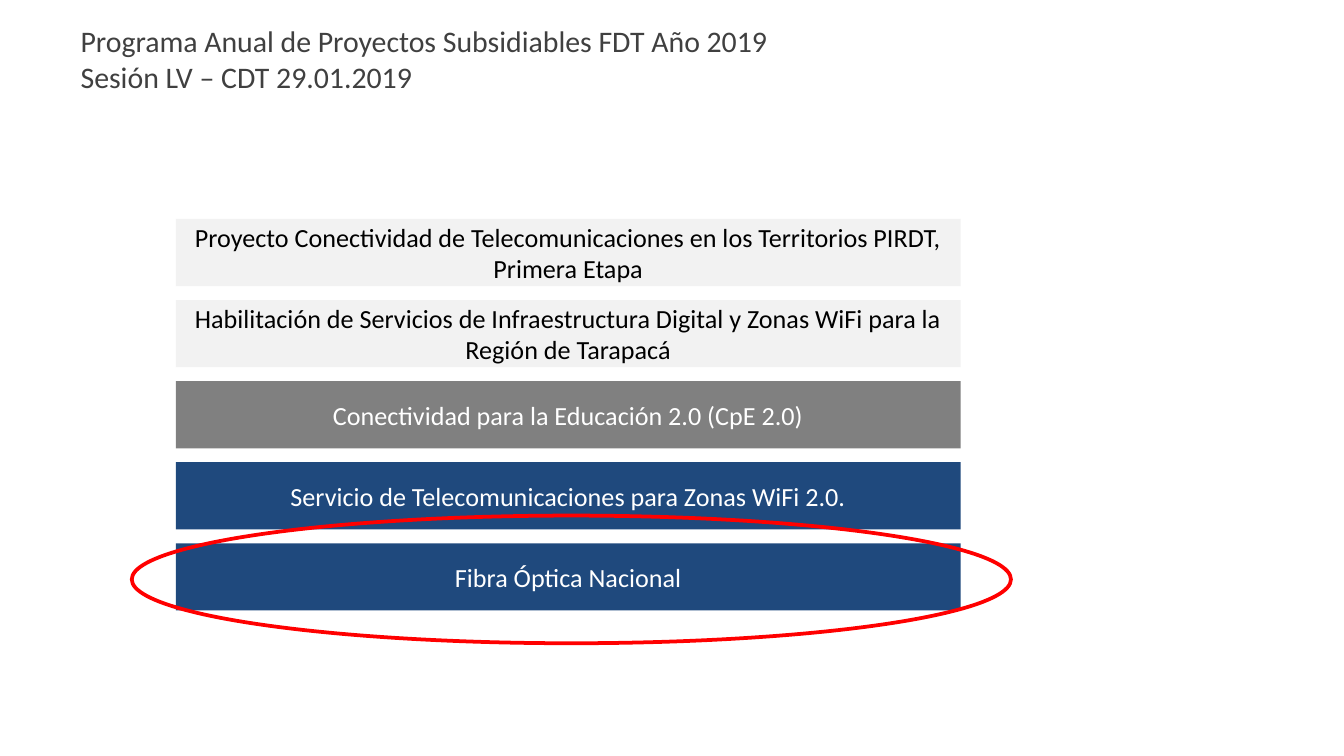
from pptx import Presentation
from pptx.dml.color import RGBColor
from pptx.enum import shapes, text
from pptx.util import Pt

COLOURS = {
    "title": "404040", "black": "000000", "white": "FFFFFF",
    "light": "F2F2F2", "grey": "808080", "blue": "1F497D", "red": "FF0000",
}
TITLE = ["Programa Anual de Proyectos Subsidiables FDT Año 2019",
         "Sesión LV – CDT 29.01.2019"]
# Each project: name, bar colour, text colour
PROJECTS = [
    ("Proyecto Conectividad de Telecomunicaciones en los Territorios PIRDT, "
     "Primera Etapa", "light", "black"),
    ("Habilitación de Servicios de Infraestructura Digital y Zonas WiFi para la "
     "Región de Tarapacá", "light", "black"),
    ("Conectividad para la Educación 2.0 (CpE 2.0)", "grey", "white"),
    ("Servicio de Telecomunicaciones para Zonas WiFi 2.0.", "blue", "white"),
    ("Fibra Óptica Nacional", "blue", "white"),
]


def colour(name):
    return RGBColor.from_string(COLOURS[name])


def apply_format(target, values):
    for name, value in values.items():
        setattr(target, name, value)


def place(shape, box):
    names = ("left", "top", "width", "height")
    apply_format(shape, dict(zip(names, map(Pt, box))))


def write(shape, lines, size, ink, align, frame_format):
    frame = shape.text_frame
    frame.text = "\n".join(lines)
    apply_format(frame, {"word_wrap": True,
                         "auto_size": text.MSO_AUTO_SIZE.NONE, **frame_format})
    for para in frame.paragraphs:
        para.alignment = align
        apply_format(para.font, {"name": "Calibri", "size": Pt(size), "bold": False})
        para.font.color.rgb = colour(ink)


def add_title(page, box):
    title = page.shapes.title
    place(title, box)
    write(title, TITLE, 16, "title", text.PP_ALIGN.JUSTIFY, {
        "vertical_anchor": text.MSO_ANCHOR.TOP,
        "margin_left": Pt(7.2), "margin_right": Pt(7.2),
        "margin_top": Pt(3.6), "margin_bottom": Pt(3.6)})


def add_projects(page, box, gap=7.45):
    left, top, width, height = box
    count = len(PROJECTS)
    bar_height = (height - gap * (count - 1)) / count
    for index, (name, fill, ink) in enumerate(PROJECTS):
        bar = page.shapes.add_shape(shapes.MSO_SHAPE.RECTANGLE, 0, 0, 0, 0)
        place(bar, (left, top + index * (bar_height + gap), width, bar_height))
        bar.shadow.inherit = False
        bar.fill.solid()
        bar.fill.fore_color.rgb = colour(fill)
        bar.line.fill.background()
        write(bar, [name], 14, ink, text.PP_ALIGN.CENTER, {
            "vertical_anchor": text.MSO_ANCHOR.MIDDLE,
            "margin_top": 0, "margin_bottom": 0})


def add_highlight(page, box):
    ring = page.shapes.add_shape(shapes.MSO_SHAPE.OVAL, 0, 0, 0, 0)
    place(ring, box)
    ring.shadow.inherit = False
    ring.fill.background()
    ring.line.color.rgb = colour("red")
    ring.line.width = Pt(2)


def main():
    deck = Presentation()
    deck.slide_width, deck.slide_height = Pt(720), Pt(405)
    page = deck.slides.add_slide(deck.slide_layouts.get_by_name("Title Only"))
    add_title(page, (36, 8.6, 650, 29.5))
    # Stack of projects, the last one ringed
    add_projects(page, (94.2, 117.3, 420.4, 209.8))
    add_highlight(page, (70.6, 276.2, 471, 68.4))
    deck.save("out.pptx")


if __name__ == "__main__":
    main()
